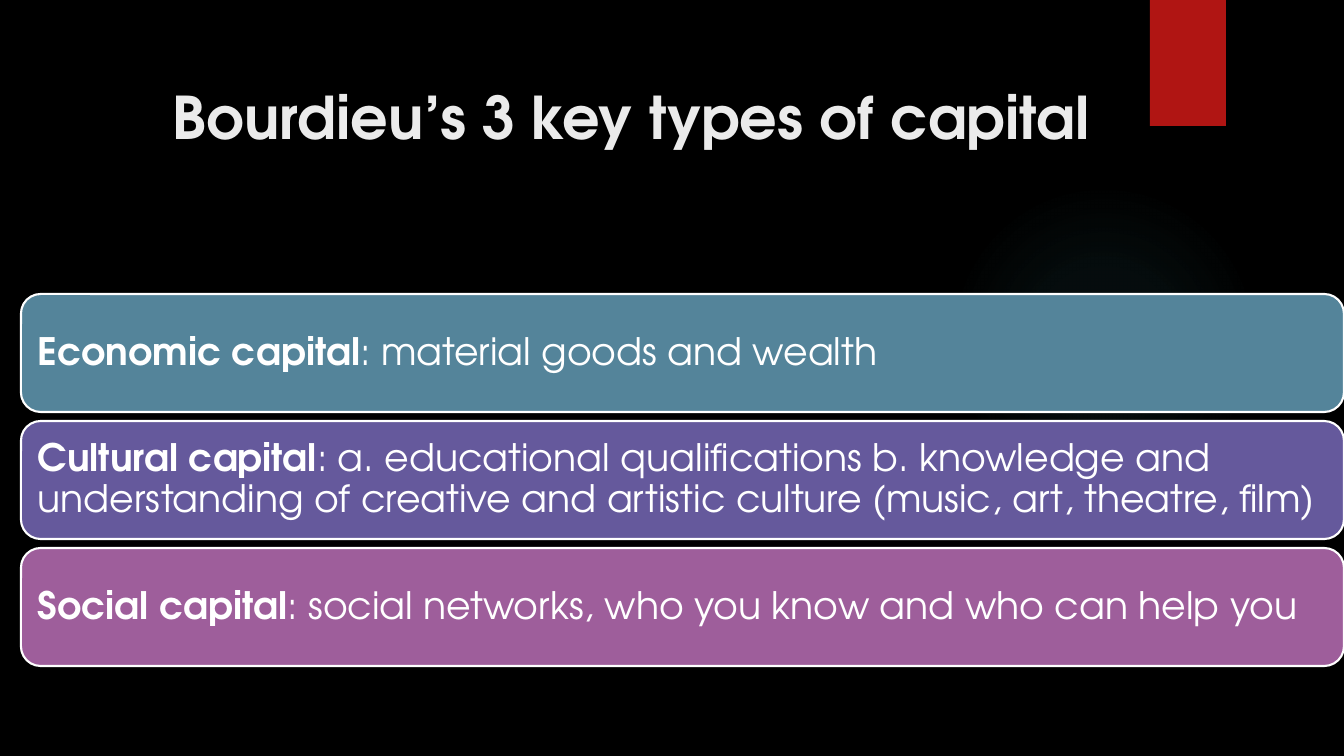
"""Build a slide on Bourdieu's three key types of capital."""
import dataclasses

import pptx
import pptx.dml.color
import pptx.enum.shapes
import pptx.enum.text
import pptx.oxml
import pptx.oxml.ns
import pptx.util

PX = 12192000 / 1344
SHAPES = pptx.enum.shapes.MSO_SHAPE


@dataclasses.dataclass(frozen=True)
class Theme:
    """Hold the colours, font and type sizes of the slide."""
    font: str = "TeX Gyre Adventor"
    background: str = "000000"
    title: str = "EBEBEB"
    bookmark: str = "B01513"
    glow: str = "50B9C1"
    white: str = "FFFFFF"
    cards: tuple = ("54849A", "65599C", "9E5E9B")
    title_size: int = 42
    card_size: int = 27


THEME = Theme()
CAPITALS = (
    ("Economic capital", ": material goods and wealth"),
    ("Cultural capital", ": a. educational qualifications b. knowledge and "
     "understanding of creative and artistic culture (music, art, theatre, film)"),
    ("Social capital", ": social networks, who you know and who can help you"),
)


def px(value):
    """Turn a length in px into EMU."""
    return pptx.util.Emu(round(value * PX))


def rgb(color):
    """Return a colour object for a hex string."""
    return pptx.dml.color.RGBColor.from_string(color)


def add_run(paragraph, text, size, color, bold):
    """Append a formatted run to a paragraph."""
    run = paragraph.add_run()
    run.text = text
    run.font.name = THEME.font
    run.font.size = pptx.util.Pt(size)
    run.font.color.rgb = rgb(color)
    run.font.bold = bold


def add_panel(slide, kind, box, color):
    """Add a filled shape with no outline and no shadow."""
    shape = slide.shapes.add_shape(kind, *map(px, box))
    shape.shadow.inherit = False
    shape.fill.solid()
    shape.fill.fore_color.rgb = rgb(color)
    shape.line.fill.background()
    return shape


def add_glow(slide, box):
    """Add a circle that fades out from its centre."""
    shape = add_panel(slide, SHAPES.OVAL, box, THEME.glow)
    stops = "".join(
        f'<a:gs pos="{position}000"><a:srgbClr val="{THEME.glow}">'
        f'<a:alpha val="{alpha}000"/></a:srgbClr></a:gs>'
        for position, alpha in ((0, 7), (36, 6), (69, 0), (100, 0)))
    gradient = pptx.oxml.parse_xml(
        f'<a:gradFill {pptx.oxml.ns.nsdecls("a")}><a:gsLst>{stops}</a:gsLst>'
        '<a:path path="circle"><a:fillToRect l="50000" t="50000" r="50000" '
        'b="50000"/></a:path></a:gradFill>')
    solid = shape.element.spPr.find(pptx.oxml.ns.qn("a:solidFill"))
    shape.element.spPr.replace(solid, gradient)


def add_title(slide, box, text):
    """Add the bold slide title."""
    frame = slide.shapes.add_textbox(*map(px, box)).text_frame
    frame.word_wrap = True
    add_run(frame.paragraphs[0], text, THEME.title_size, THEME.title, True)


def add_card(slide, box, color, term, meaning):
    """Add a rounded card with a bold term and its meaning."""
    shape = add_panel(slide, SHAPES.ROUNDED_RECTANGLE, box, color)
    shape.line.color.rgb = rgb(THEME.white)
    shape.line.width = pptx.util.Pt(1.5)
    frame = shape.text_frame
    frame.word_wrap = True
    frame.vertical_anchor = pptx.enum.text.MSO_ANCHOR.MIDDLE
    frame.margin_left = frame.margin_right = px(11)
    frame.margin_top = frame.margin_bottom = px(11)
    paragraph = frame.paragraphs[0]
    paragraph.alignment = pptx.enum.text.PP_ALIGN.LEFT
    paragraph.line_spacing = 0.9
    add_run(paragraph, term, THEME.card_size, THEME.white, True)
    add_run(paragraph, meaning, THEME.card_size, THEME.white, False)


def main():
    """Build and save the slide."""
    presentation = pptx.Presentation()
    presentation.slide_width, presentation.slide_height = px(1344), px(756)
    slide = presentation.slides.add_slide(presentation.slide_layouts[6])
    slide.background.fill.solid()
    slide.background.fill.fore_color.rgb = rgb(THEME.background)
    add_glow(slide, (949, 184, 310, 310))
    add_panel(slide, SHAPES.RECTANGLE, (1150, 0, 76, 126), THEME.bookmark)
    add_title(slide, (163, 76, 1105, 106), "Bourdieu’s 3 key types of capital")
    for index, (color, capital) in enumerate(zip(THEME.cards, CAPITALS)):
        add_card(slide, (21, 294 + 127 * index, 1323, 118), color, *capital)
    presentation.save("out.pptx")


if __name__ == "__main__":
    main()
